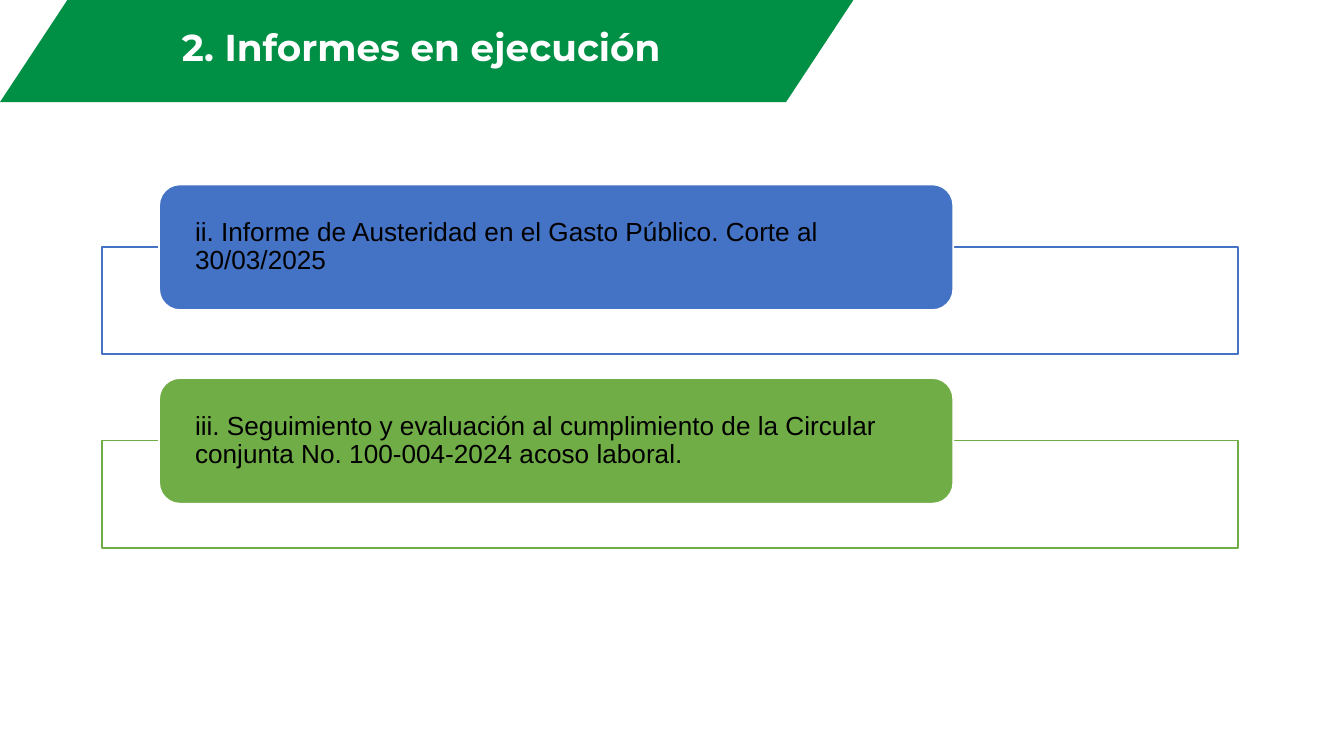
"""Build the slide of reports in progress."""
from pptx import Presentation
from pptx.dml.color import RGBColor
from pptx.enum.shapes import MSO_SHAPE as Kind
from pptx.enum.text import MSO_ANCHOR as Anchor, PP_ALIGN as Align
from pptx.util import Pt


def add_box(kind, left, top, width, height, fill, line=None):
    box = slide.shapes.add_shape(kind, Pt(left), Pt(top), Pt(width), Pt(height))
    box.shadow.inherit = False
    box.fill.solid()
    box.fill.fore_color.rgb = RGBColor.from_string(fill)
    if line:
        box.line.color.rgb = RGBColor.from_string(line)
        box.line.width = Pt(1)
    else:
        box.line.fill.background()
    return box


def set_text(box, text, font, size, color, align, anchor):
    frame = box.text_frame
    frame.word_wrap = True
    frame.vertical_anchor = anchor
    frame.text = text
    para = frame.paragraphs[0]
    para.alignment = align
    para.line_spacing = 0.9
    run = para.runs[0]
    run.font.name = font
    run.font.size = Pt(size)
    run.font.color.rgb = RGBColor.from_string(color)
    return run


deck = Presentation()
deck.slide_width, deck.slide_height = Pt(720), Pt(405)
slide = deck.slides.add_slide(deck.slide_layouts[6])

banner = add_box(Kind.PARALLELOGRAM, 0, 0, 457.2, 54.7, "009045")
banner.adjustments[0] = 0.66
title = slide.shapes.add_textbox(Pt(22.3), Pt(7.2), Pt(406.8), Pt(33.8))
run = set_text(title, "2. Informes en ejecución", "Montserrat", 20, "FFFFFF",
               Align.CENTER, Anchor.BOTTOM)
run.font.bold = True

reports = [
    ("ii. Informe de Austeridad en el Gasto Público. Corte al 30/03/2025", "4472C4"),
    ("iii. Seguimiento y evaluación al cumplimiento de la Circular conjunta "
     "No. 100-004-2024 acoso laboral.", "70AD47"),
]
for row, (text, color) in enumerate(reports):
    top = 98.8 + row * 103.7
    add_box(Kind.RECTANGLE, 54.7, top + 33.5, 608.4, 57.6, "FFFFFF", color)
    label = add_box(Kind.ROUNDED_RECTANGLE, 85.2, top, 425.5, 67.4, color, "FFFFFF")
    set_text(label, text, "Arial", 14, "000000", Align.LEFT, Anchor.MIDDLE)
    frame = label.text_frame
    frame.margin_left = frame.margin_right = Pt(16)
    frame.margin_top = frame.margin_bottom = 0

deck.save("out.pptx")
